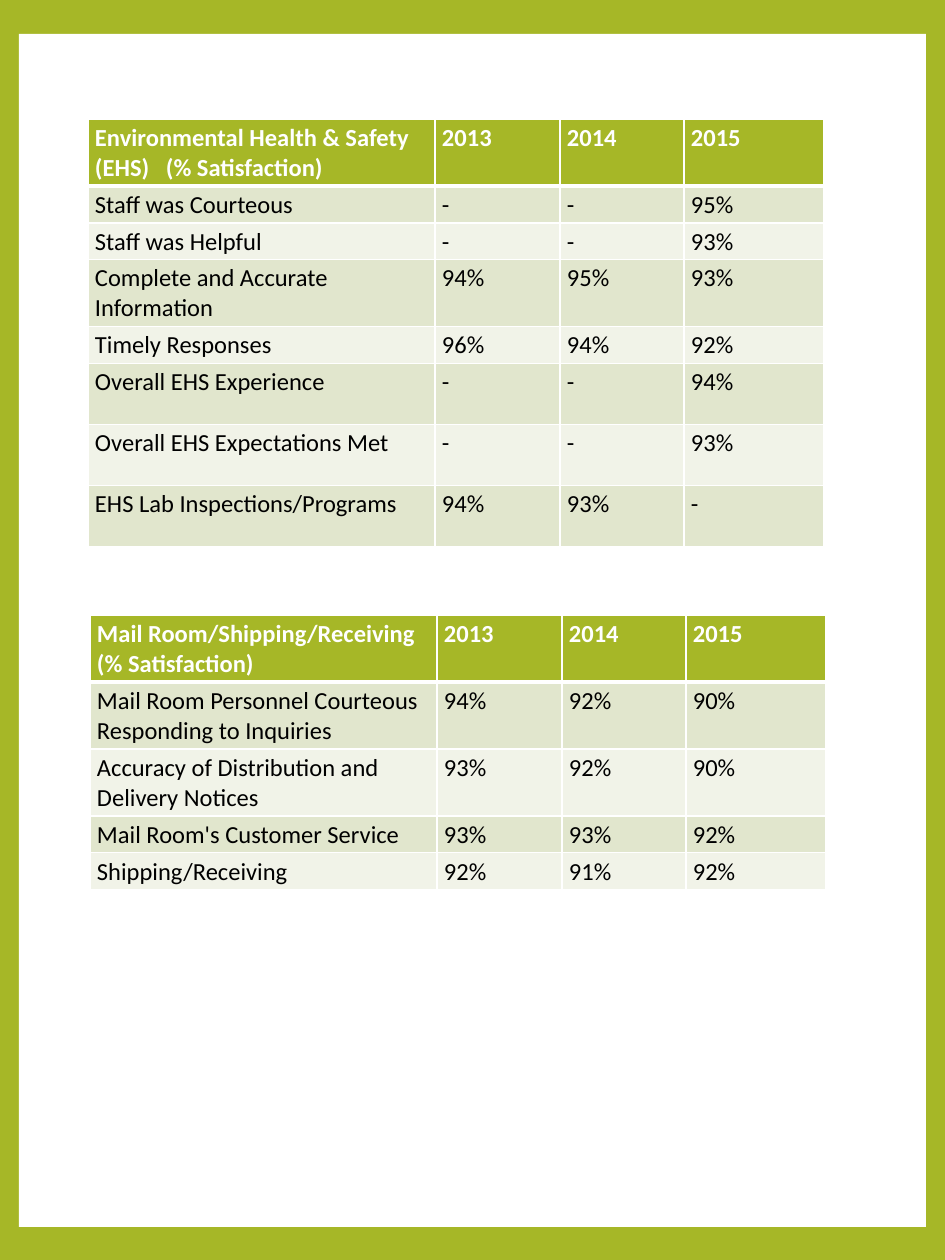
from lxml import etree
from pptx import Presentation
from pptx.dml.color import RGBColor
from pptx.enum.shapes import MSO_SHAPE
from pptx.oxml.ns import qn
from pptx.util import Pt

RECT = MSO_SHAPE.RECTANGLE
GREEN = RGBColor(0xA6, 0xB7, 0x27)
SAGE = RGBColor(0xE1, 0xE6, 0xCD)
PALE = RGBColor(0xF1, 0xF3, 0xE8)
WHITE = RGBColor(0xFF, 0xFF, 0xFF)
BLACK = RGBColor(0x00, 0x00, 0x00)
SCALE = 914400 / 126
YEARS = ["2013", "2014", "2015"]
WIDTHS = [347, 125, 124, 140]

SAFETY = [
    ["Environmental Health & Safety (EHS)   (% Satisfaction)"] + YEARS,
    ["Staff was Courteous", "-", "-", "95%"],
    ["Staff was Helpful", "-", "-", "93%"],
    ["Complete and Accurate Information", "94%", "95%", "93%"],
    ["Timely Responses", "96%", "94%", "92%"],
    ["Overall EHS Experience", "-", "-", "94%"],
    ["Overall EHS Expectations Met", "-", "-", "93%"],
    ["EHS Lab Inspections/Programs", "94%", "93%", "-"],
]
MAIL = [
    ["Mail Room/Shipping/Receiving\n(% Satisfaction)"] + YEARS,
    ["Mail Room Personnel Courteous Responding to Inquiries", "94%", "92%", "90%"],
    ["Accuracy of Distribution and Delivery Notices", "93%", "92%", "90%"],
    ["Mail Room's Customer Service", "93%", "93%", "92%"],
    ["Shipping/Receiving", "92%", "91%", "92%"],
]
TABLES = [
    (88, 119, SAFETY, [67, 36, 36, 67, 36, 61, 61, 61]),
    (90, 615, MAIL, [67, 67, 67, 36, 36]),
]


def px(n):
    return round(n * SCALE)


def edge(cell, side, width):
    line = etree.SubElement(cell._tc.get_or_add_tcPr(), qn("a:ln" + side), w=str(Pt(width)))
    fill = etree.SubElement(line, qn("a:solidFill"))
    etree.SubElement(fill, qn("a:srgbClr"), val=str(WHITE))


prs = Presentation()
prs.slide_width = px(945)
prs.slide_height = px(1260)
slide = prs.slides.add_slide(prs.slide_layouts[6])
slide.background.fill.solid()
slide.background.fill.fore_color.rgb = GREEN

page = slide.shapes.add_shape(RECT, px(19), px(34), px(907), px(1193))
page.shadow.inherit = False
page.fill.solid()
page.fill.fore_color.rgb = WHITE
page.line.fill.background()

for left, top, data, heights in TABLES:
    frame = slide.shapes.add_table(
        len(data), len(WIDTHS), px(left), px(top), px(sum(WIDTHS)), px(sum(heights)))
    table = frame.table
    for col, width in zip(table.columns, WIDTHS):
        col.width = px(width)
    for r, (row, height) in enumerate(zip(data, heights)):
        table.rows[r].height = px(height)
        head = r == 0
        shade = GREEN if head else SAGE if r % 2 else PALE
        for c, text in enumerate(row):
            cell = table.cell(r, c)
            cell.margin_left = cell.margin_right = px(7)
            cell.margin_top = px(4)
            cell.margin_bottom = px(3)
            edge(cell, "L", 1)
            edge(cell, "R", 1)
            edge(cell, "T", 3 if r == 1 else 1)
            edge(cell, "B", 3 if head else 1)
            cell.fill.solid()
            cell.fill.fore_color.rgb = shade
            cell.text_frame.text = text
            for para in cell.text_frame.paragraphs:
                for run in para.runs:
                    run.font.name = "Calibri"
                    run.font.size = Pt(14)
                    run.font.bold = head
                    run.font.color.rgb = WHITE if head else BLACK

prs.save("out.pptx")
